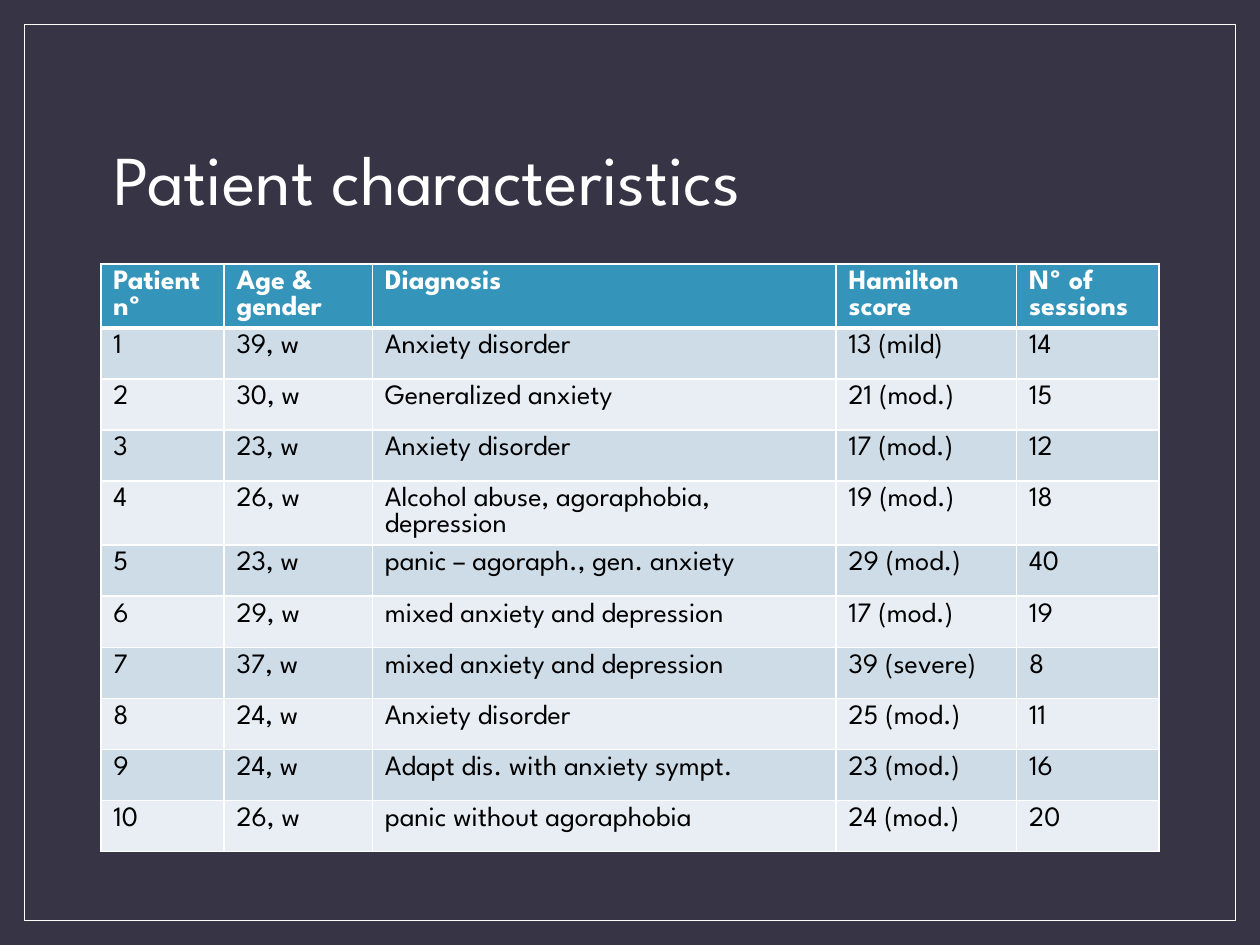
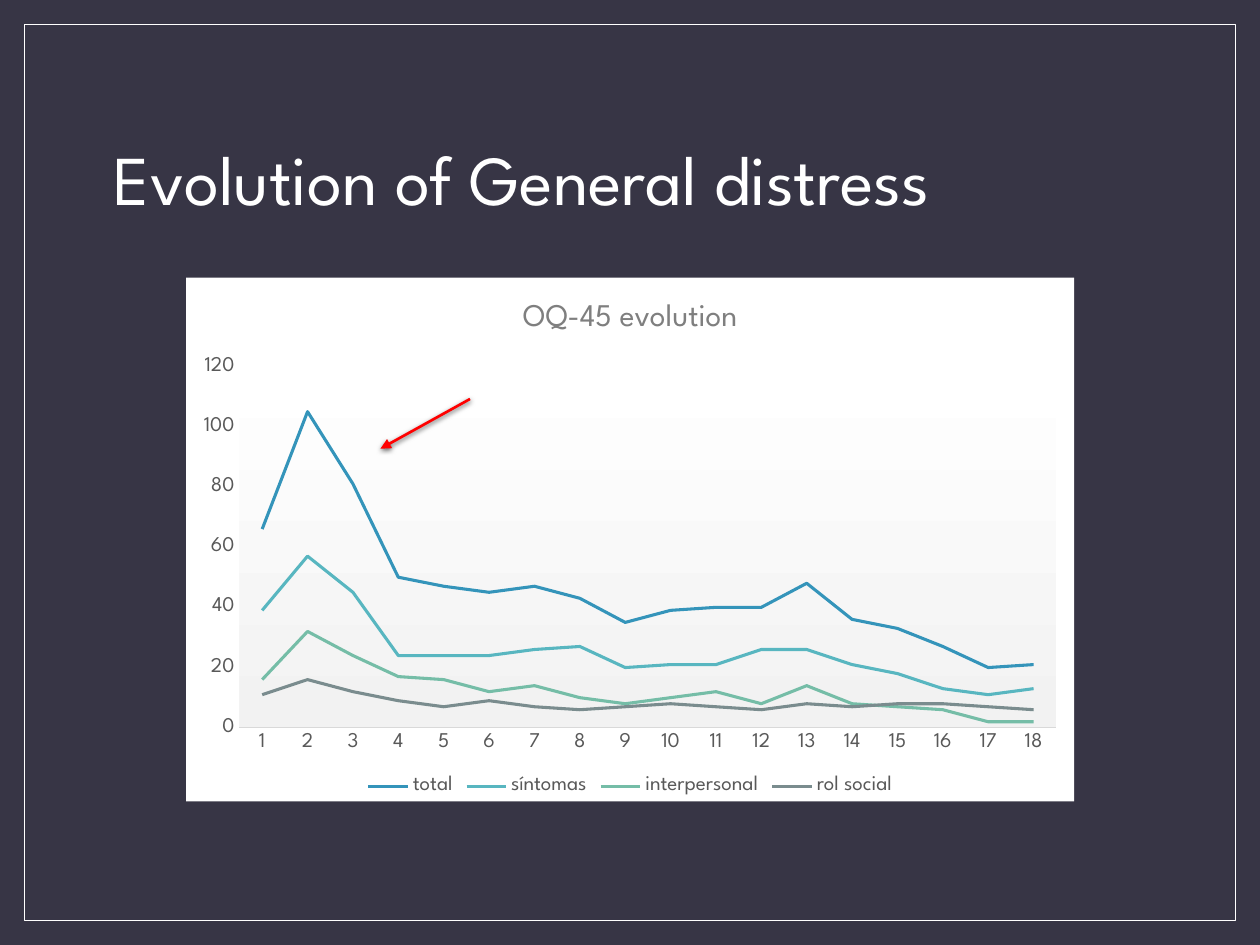
from pptx import Presentation
from pptx.chart.data import CategoryChartData as ChartData
from pptx.dml.color import RGBColor
from pptx.enum.chart import XL_CHART_TYPE as Kind, XL_LEGEND_POSITION as Place
from pptx.enum.chart import XL_MARKER_STYLE as Marker, XL_TICK_MARK as Tick
from pptx.enum.shapes import MSO_CONNECTOR as Link, MSO_SHAPE as Shape
from pptx.enum.text import MSO_ANCHOR as Anchor, MSO_AUTO_SIZE as Fit, PP_ALIGN as Align
from pptx.oxml import parse_xml
from pptx.oxml.ns import nsdecls, qn
from pptx.util import Pt

FACE = "League Spartan"
DARK, WHITE, BLACK = "373545", "FFFFFF", "000000"
BLUE, BANDS = "3494BA", ("CEDCE7", "E8EEF3")
GREY, SOFT, PALE, RULE = "595959", "7F7F7F", "F2F2F2", "D9D9D9"
RED = "FF0000"

HEAD = ("Patient nº", "Age & gender", "Diagnosis", "Hamilton score", "Nº of sessions")
CASES = (
    ("39, w", "Anxiety disorder", "13 (mild)", "14"),
    ("30, w", "Generalized anxiety", "21 (mod.)", "15"),
    ("23, w", "Anxiety disorder", "17 (mod.)", "12"),
    ("26, w", "Alcohol abuse, agoraphobia, depression", "19 (mod.)", "18"),
    ("23, w", "panic – agoraph., gen. anxiety", "29 (mod.)", "40"),
    ("29, w", "mixed anxiety and depression", "17 (mod.)", "19"),
    ("37, w", "mixed anxiety and depression", "39 (severe)", "8"),
    ("24, w", "Anxiety disorder", "25 (mod.)", "11"),
    ("24, w", "Adapt dis. with anxiety sympt.", "23 (mod.)", "16"),
    ("26, w", "panic without agoraphobia", "24 (mod.)", "20"),
)
SCORES = (
    ("total", BLUE,
     (66, 105, 81, 50, 47, 45, 47, 43, 35, 39, 40, 40, 48, 36, 33, 27, 20, 21)),
    ("síntomas", "58B6C0",
     (39, 57, 45, 24, 24, 24, 26, 27, 20, 21, 21, 26, 26, 21, 18, 13, 11, 13)),
    ("interpersonal", "75BDA7",
     (16, 32, 24, 17, 16, 12, 14, 10, 8, 10, 12, 8, 14, 8, 7, 6, 2, 2)),
    ("rol social", "7A8C8E",
     (11, 16, 12, 9, 7, 9, 7, 6, 7, 8, 7, 6, 8, 7, 8, 8, 7, 6)),
)


# Shared helpers
def rgb(code):
    return RGBColor.from_string(code)


def paint(fill, code):
    fill.solid()
    fill.fore_color.rgb = rgb(code)


def style(font, size, code, bold=False):
    font.name, font.size, font.bold = FACE, Pt(size), bold
    font.color.rgb = rgb(code)


def solid(code):
    return f'<a:solidFill><a:srgbClr val="{code}"/></a:solidFill>'


def start(deck, text):
    """Add a slide with its thin frame and its title."""
    slide = deck.slides.add_slide(deck.slide_layouts[5])
    frame = slide.shapes.add_shape(Shape.RECTANGLE, Pt(13.7), Pt(13.7), Pt(692.6), Pt(512.6))
    frame.shadow.inherit = False
    frame.fill.background()
    frame.line.width = Pt(0.5)
    frame.line.color.rgb = rgb(WHITE)

    title = slide.shapes.title
    title.left, title.top, title.width, title.height = Pt(57.6), Pt(50.4), Pt(604.8), Pt(108)
    body = title.text_frame
    body.text = text
    body.word_wrap, body.auto_size = True, Fit.NONE
    body.vertical_anchor = Anchor.MIDDLE
    par = body.paragraphs[0]
    par.alignment, par.line_spacing = Align.LEFT, 0.9
    style(par.font, 40, WHITE)
    return slide


# Table
def edge(cell, heavy):
    """Draw white borders; the heavy side is 3 pt, the others 1 pt."""
    props = cell._tc.get_or_add_tcPr()
    for side in "LRTB":
        width = Pt(3 if side == heavy else 1)
        props.append(parse_xml(
            f'<a:ln{side} {nsdecls("a")} w="{width}">{solid(WHITE)}</a:ln{side}>'))


def add_cases(slide, left, top, widths, high):
    rows = [HEAD] + [(str(num), *case) for num, case in enumerate(CASES, 1)]
    table = slide.shapes.add_table(
        len(rows), len(HEAD), Pt(left), Pt(top), Pt(sum(widths)), Pt(high * len(rows))).table
    table.horz_banding = False
    for col, width in zip(table.columns, widths):
        col.width = Pt(width)
    for i, row in enumerate(rows):
        table.rows[i].height = Pt(high)
        for j, text in enumerate(row):
            cell = table.cell(i, j)
            cell.text = text
            edge(cell, {0: "B", 1: "T"}.get(i))
            paint(cell.fill, BANDS[(i - 1) % 2] if i else BLUE)
            style(cell.text_frame.paragraphs[0].font, 16, BLACK if i else WHITE, not i)


# Chart
def back(chart):
    """Set the plot's place, its gradient and the white chart ground."""
    plot = chart.element.find(".//" + qn("c:plotArea"))
    for old in plot.findall(qn("c:layout")):
        plot.remove(old)
    spots = (("x", 0.06), ("y", 0.17), ("w", 0.92), ("h", 0.69))
    place = "".join(f'<c:{key}Mode val="edge"/>' for key in "xy")
    place += "".join(f'<c:{key} val="{val}"/>' for key, val in spots)
    plot.insert(0, parse_xml(
        f'<c:layout {nsdecls("c")}><c:manualLayout><c:layoutTarget val="inner"/>'
        f'{place}</c:manualLayout></c:layout>'))
    stops = "".join(f'<a:gs pos="{pos}"><a:srgbClr val="{code}"/></a:gs>'
                    for pos, code in ((0, WHITE), (100000, PALE)))
    plot.append(parse_xml(
        f'<c:spPr {nsdecls("c", "a")}><a:gradFill><a:gsLst>{stops}</a:gsLst>'
        '<a:lin ang="5400000" scaled="0"/></a:gradFill></c:spPr>'))
    chart.element.find(qn("c:chart")).addnext(parse_xml(
        f'<c:spPr {nsdecls("c", "a")}>{solid(WHITE)}<a:ln><a:noFill/></a:ln></c:spPr>'))


def add_scores(slide, left, top, wide, high):
    data = ChartData()
    data.categories = [str(num) for num in range(1, 19)]
    for name, _, vals in SCORES:
        data.add_series(name, vals)
    chart = slide.shapes.add_chart(
        Kind.LINE, Pt(left), Pt(top), Pt(wide), Pt(high), data).chart
    style(chart.font, 10, GREY)
    back(chart)

    chart.has_title = True
    text = chart.chart_title.text_frame
    text.text = "OQ-45 evolution"
    style(text.paragraphs[0].font, 18, SOFT)
    chart.chart_title.include_in_layout = False

    chart.has_legend = True
    chart.legend.position = Place.BOTTOM
    chart.legend.include_in_layout = False
    style(chart.legend.font, 12, GREY)

    for axis in (chart.category_axis, chart.value_axis):
        axis.has_major_gridlines = False
        axis.major_tick_mark = axis.minor_tick_mark = Tick.NONE
        style(axis.tick_labels.font, 12, GREY)
    base = chart.category_axis.format.line
    base.width = Pt(0.75)
    base.color.rgb = rgb(RULE)
    scale = chart.value_axis
    scale.format.line.fill.background()
    scale.minimum_scale, scale.maximum_scale, scale.major_unit = 0, 120, 20

    chart.plots[0].vary_by_categories = False
    for line, (_, code, _) in zip(chart.plots[0].series, SCORES):
        line.smooth = False
        line.marker.style = Marker.NONE
        line.format.line.width = Pt(1.75)
        line.format.line.color.rgb = rgb(code)


def add_arrow(slide, left, top, wide, high):
    """Point from the box's top right to its bottom left."""
    arrow = slide.shapes.add_connector(
        Link.STRAIGHT, Pt(left + wide), Pt(top), Pt(left), Pt(top + high))
    arrow.line.width = Pt(1.5)
    arrow.line.color.rgb = rgb(RED)
    props = arrow._element.spPr
    props.find(qn("a:ln")).append(parse_xml(f'<a:tailEnd {nsdecls("a")} type="triangle"/>'))
    props.append(parse_xml(
        f'<a:effectLst {nsdecls("a")}><a:outerShdw blurRad="{Pt(3)}" dist="{Pt(1)}" '
        f'dir="5400000" rotWithShape="0"><a:srgbClr val="{BLACK}"><a:alpha val="63000"/>'
        '</a:srgbClr></a:outerShdw></a:effectLst>'))


def main():
    deck = Presentation()
    deck.slide_width, deck.slide_height = Pt(720), Pt(540)
    paint(deck.slide_master.background.fill, DARK)

    slide = start(deck, "Patient characteristics")
    add_cases(slide, 57.6, 150.8, (70.4, 84.8, 265, 103.2, 81.4), 29.2)

    slide = start(deck, "Evolution of General distress")
    add_scores(slide, 106.4, 158.6, 507.4, 299.3)
    add_arrow(slide, 217.4, 228, 51.2, 28.4)

    deck.save("out.pptx")


if __name__ == "__main__":
    main()
